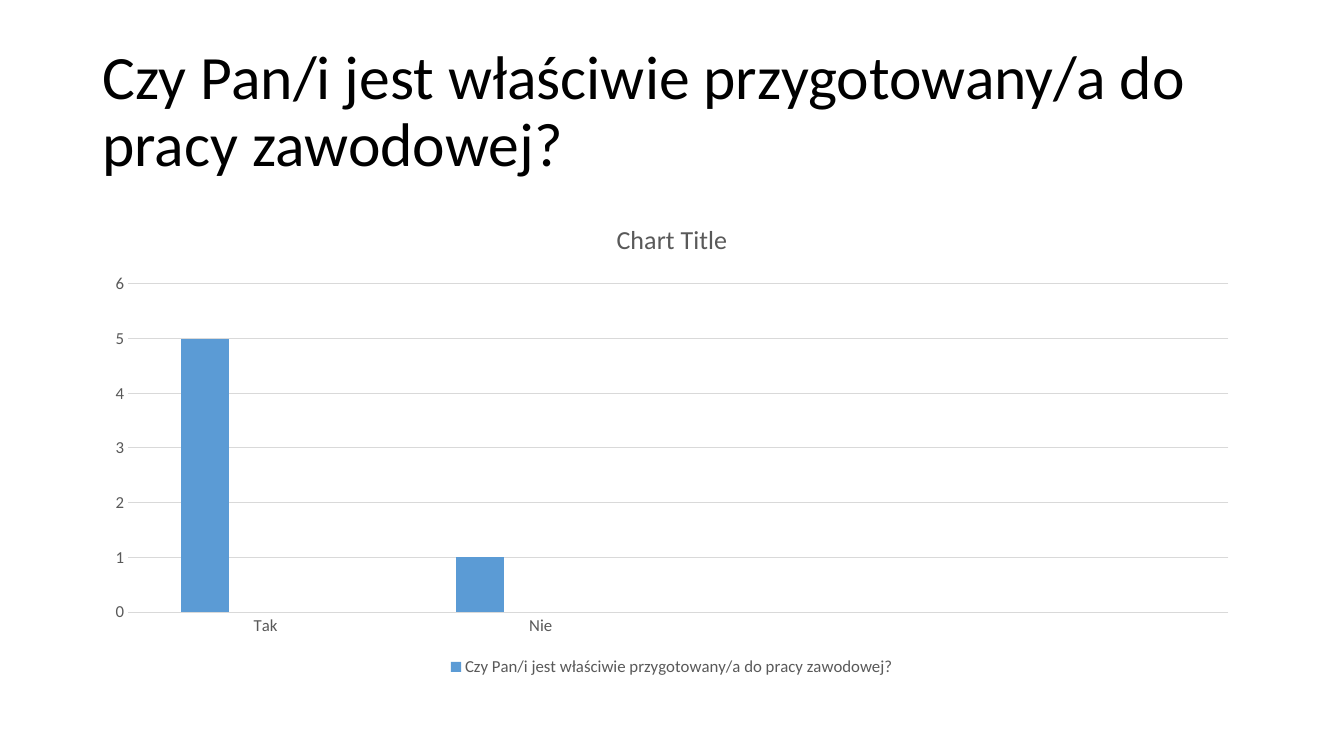
from lxml import etree
from pptx import Presentation
from pptx.chart.data import CategoryChartData
from pptx.dml.color import RGBColor
from pptx.enum.chart import XL_CHART_TYPE, XL_LEGEND_POSITION, XL_TICK_MARK
from pptx.enum.text import MSO_ANCHOR
from pptx.util import Cm, Pt

COLUMN = XL_CHART_TYPE.COLUMN_CLUSTERED
BOTTOM = XL_LEGEND_POSITION.BOTTOM
NO_TICK = XL_TICK_MARK.NONE
MIDDLE = MSO_ANCHOR.MIDDLE

# Content
ASK = "Czy Pan/i jest właściwie przygotowany/a do pracy zawodowej?"
HEAD = "Chart Title"
CATS = ["Tak", "Nie", "", ""]
BLANK = [None] * len(CATS)
SERIES = [
    (ASK, [5, 1, None, None], "blue"),
    ("Series 2", BLANK, "orange"),
    ("Series 3", BLANK, "gray"),
]
HIDDEN = [1, 2]
FONT = "Calibri"
COLORS = {
    "black": "000000", "text": "595959", "grid": "D9D9D9",
    "blue": "5B9BD5", "orange": "ED7D31", "gray": "A5A5A5",
}

# Layout
LEFT, WIDTH = Cm(2.33), Cm(29.21)
TITLE_TOP, TITLE_HIGH = Cm(1.01), Cm(3.68)
CHART_TOP, CHART_HIGH = Cm(5.07), Cm(12.09)


def paint(name):
    return RGBColor.from_string(COLORS[name])


def style(font, size, color):
    font.name = FONT
    font.size = Pt(size)
    font.bold = False
    font.color.rgb = paint(color)


def rule(line):
    line.color.rgb = paint("grid")
    line.width = Pt(0.75)


def add_title(slide):
    box = slide.shapes.add_textbox(LEFT, TITLE_TOP, WIDTH, TITLE_HIGH)
    frame = box.text_frame
    frame.word_wrap = True
    frame.vertical_anchor = MIDDLE
    frame.text = ASK
    para = frame.paragraphs[0]
    para.line_spacing = 0.9
    style(para.runs[0].font, 44, "black")


def hide_keys(legend):
    node = legend._element
    tag = etree.QName(node).namespace
    spot = node.find(f"{{{tag}}}legendPos")
    for index in reversed(HIDDEN):
        entry = etree.Element(f"{{{tag}}}legendEntry")
        etree.SubElement(entry, f"{{{tag}}}idx", val=str(index))
        etree.SubElement(entry, f"{{{tag}}}delete", val="1")
        spot.addnext(entry)


def add_chart(slide):
    data = CategoryChartData()
    data.categories = CATS
    for name, values, _ in SERIES:
        data.add_series(name, values)
    chart = slide.shapes.add_chart(
        COLUMN, LEFT, CHART_TOP, WIDTH, CHART_HIGH, data).chart
    style(chart.font, 12, "text")

    # Heading
    chart.has_title = True
    frame = chart.chart_title.text_frame
    frame.text = HEAD
    style(frame.paragraphs[0].runs[0].font, 18.6, "text")
    chart.chart_title.include_in_layout = False

    # Columns
    plot = chart.plots[0]
    plot.gap_width = 219
    plot.overlap = -27
    plot.vary_by_categories = False
    for bar, (_, _, color) in zip(plot.series, SERIES):
        bar.format.fill.solid()
        bar.format.fill.fore_color.rgb = paint(color)

    # Axes
    for axis in (chart.category_axis, chart.value_axis):
        axis.major_tick_mark = axis.minor_tick_mark = NO_TICK
        style(axis.tick_labels.font, 12, "text")
    rule(chart.category_axis.format.line)
    chart.value_axis.format.line.fill.background()
    rule(chart.value_axis.major_gridlines.format.line)

    # Legend
    chart.has_legend = True
    chart.legend.position = BOTTOM
    chart.legend.include_in_layout = False
    style(chart.legend.font, 12, "text")
    hide_keys(chart.legend)


def main():
    deck = Presentation()
    deck.slide_width, deck.slide_height = Cm(33.87), Cm(19.05)
    slide = deck.slides.add_slide(deck.slide_layouts[6])
    add_title(slide)
    add_chart(slide)
    deck.save("out.pptx")


if __name__ == "__main__":
    main()
